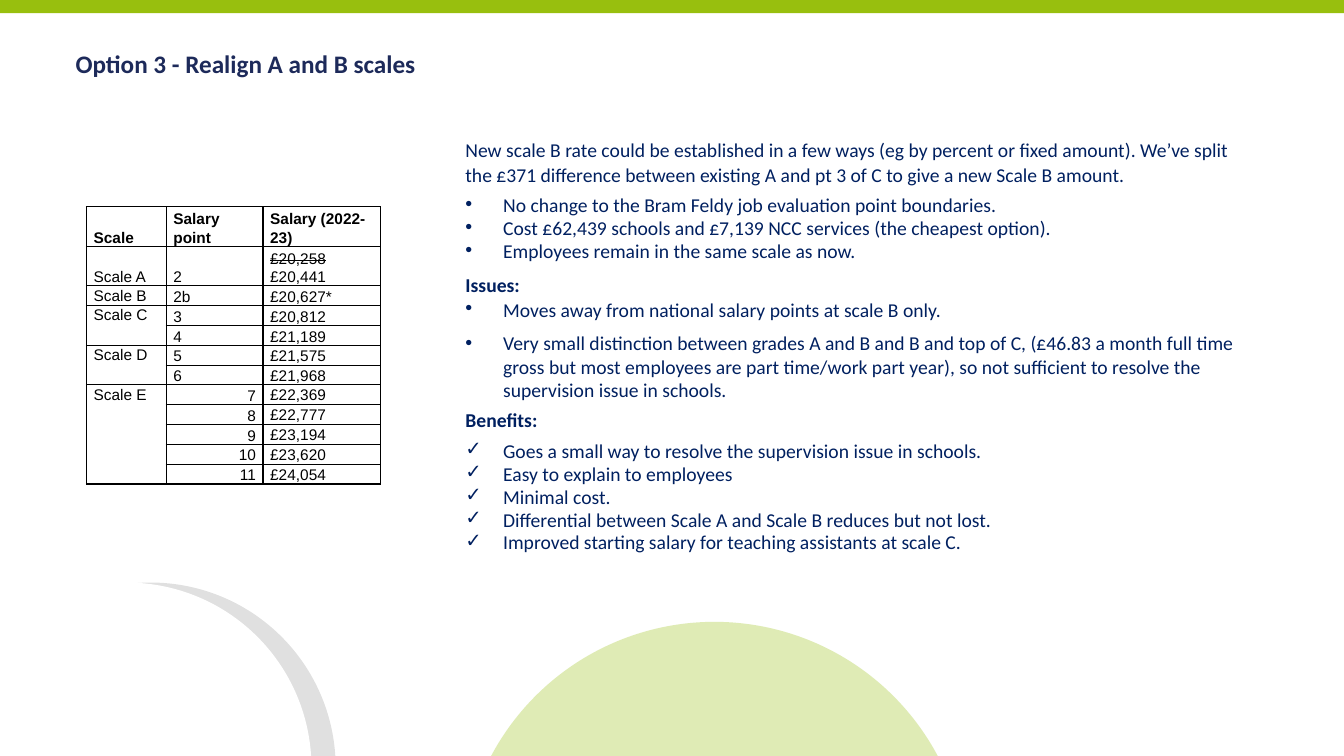
from dataclasses import dataclass

from lxml.etree import SubElement
from pptx import Presentation
from pptx.dml.color import RGBColor
from pptx.enum.shapes import MSO_SHAPE
from pptx.enum.text import MSO_ANCHOR, PP_ALIGN
from pptx.oxml.ns import qn
from pptx.util import Cm, Pt


@dataclass(frozen=True)
class Theme:
    green: str = "97BF0D"
    bar: str = "98BF0E"
    white: str = "FFFFFF"
    black: str = "000000"
    title: str = "1D2A5A"
    navy: str = "002060"
    title_size: int = 18
    body_size: int = 14
    table_size: int = 11
    font: str = "Calibri"
    table_font: str = "Arial"


def set_all(obj, values):
    for name, value in values.items():
        setattr(obj, name, value)


class SlideBuilder:
    def __init__(self, prs, theme):
        self.theme = theme
        self.s = prs.slides.add_slide(prs.slide_layouts[5])

    def run(self, p, text, size, color, font, bold=False, strike=False):
        r = p.add_run()
        r.text = text
        set_all(r.font, {"size": Pt(size), "name": font, "bold": bold})
        r.font.color.rgb = RGBColor.from_string(color)
        if strike:
            r._r.get_or_add_rPr().set("strike", "sngStrike")

    def shape(self, kind, box, color, alpha=None):
        sp = self.s.shapes.add_shape(kind, *map(Cm, box))
        sp.shadow.inherit = False
        sp.fill.solid()
        sp.fill.fore_color.rgb = RGBColor.from_string(color)
        sp.line.fill.background()
        if alpha:
            clr = sp.fill._xPr.find(qn("a:solidFill"))[0]
            SubElement(clr, qn("a:alpha"), val=str(alpha * 1000))

    def title(self, text, box):
        sp = self.s.shapes.title
        set_all(sp, dict(zip(("left", "top", "width", "height"), map(Cm, box))))
        tf = sp.text_frame
        set_all(tf, {"word_wrap": True, "vertical_anchor": MSO_ANCHOR.TOP})
        p = tf.paragraphs[0]
        set_all(p, {"alignment": PP_ALIGN.LEFT, "line_spacing": 1.07, "space_after": Pt(8)})
        t = self.theme
        self.run(p, text, t.title_size, t.title, t.font, bold=True)

    def body(self, paragraphs, box):
        t = self.theme
        tf = self.s.shapes.add_textbox(*map(Cm, box)).text_frame
        tf.word_wrap = True
        for i, (text, bullet, bold, spacing, before, after) in enumerate(paragraphs):
            p = tf.add_paragraph() if i else tf.paragraphs[0]
            set_all(p, {"line_spacing": spacing, "space_before": Pt(before),
                        "space_after": Pt(after)})
            if bullet:
                self.bullet(p, bullet)
            self.run(p, text, t.body_size, t.navy, t.font, bold)

    def bullet(self, p, char):
        pPr = p._p.get_or_add_pPr()
        pPr.set("marL", str(Cm(0.95)))
        pPr.set("indent", str(-Cm(0.95)))
        SubElement(SubElement(pPr, qn("a:buClr")), qn("a:srgbClr"), val=self.theme.navy)
        SubElement(pPr, qn("a:buFont"), typeface="Arial")
        SubElement(pPr, qn("a:buChar"), char=char)

    def borders(self, cell):
        tcPr = cell._tc.get_or_add_tcPr()
        for side in ("lnL", "lnR", "lnT", "lnB"):
            ln = SubElement(tcPr, qn(f"a:{side}"), w=str(Pt(1)))
            fill = SubElement(ln, qn("a:solidFill"))
            SubElement(fill, qn("a:srgbClr"), val=self.theme.black)
        cell.fill.background()

    def table(self, rows, spans, left, top, widths, heights):
        t = self.theme
        tbl = self.s.shapes.add_table(len(rows), len(widths), Cm(left), Cm(top),
                                      Cm(sum(widths)), Cm(sum(heights))).table
        set_all(tbl, {"first_row": False, "horz_banding": False})
        for column, width in zip(tbl.columns, widths):
            column.width = Cm(width)
        for row, height in zip(tbl.rows, heights):
            row.height = Cm(height)
        for i, row in enumerate(rows):
            for j, text in enumerate(row):
                cell = tbl.cell(i, j)
                top_cell = j == 0 and i > 1
                set_all(cell, {"margin_left": Cm(0.18), "margin_right": Cm(0.18),
                               "margin_top": 0, "margin_bottom": 0,
                               "vertical_anchor": MSO_ANCHOR.TOP if top_cell else MSO_ANCHOR.BOTTOM})
                self.borders(cell)
                p = cell.text_frame.paragraphs[0]
                set_all(p, {"line_spacing": 1.07, "space_after": Pt(8)})
                if j == 1 and i >= 7:
                    p.alignment = PP_ALIGN.RIGHT
                if j == 2 and 7 <= i < len(rows) - 1:
                    cell.vertical_anchor = MSO_ANCHOR.MIDDLE
                # A tuple holds the old, struck-out value and the new one
                parts = text if isinstance(text, tuple) else (text,)
                for k, part in enumerate(parts):
                    if part:
                        self.run(p, part, t.table_size, t.black, t.table_font,
                                 bold=i == 0, strike=k < len(parts) - 1)
        for first, last in spans:
            tbl.cell(first, 0).merge(tbl.cell(last, 0))


SALARIES = [
    ("Scale", "Salary point", "Salary (2022-23)"),
    ("Scale A", "2", ("£20,258", " £20,441")),
    ("Scale B", "2b", "£20,627*"),
    ("Scale C", "3", "£20,812"),
    ("", "4", "£21,189"),
    ("Scale D", "5", "£21,575"),
    ("", "6", "£21,968"),
    ("Scale E", "7", "£22,369"),
    ("", "8", "£22,777"),
    ("", "9", "£23,194"),
    ("", "10", "£23,620"),
    ("", "11", "£24,054"),
]


def item(text, char="•", spacing=0.5):
    return text, char, False, spacing, 4, 4


def tick(text):
    return item(text, "✓")


# Text, bullet, bold, line spacing, space before, space after
BODY = [
    ("New scale B rate could be established in a few ways (eg by percent or fixed amount). "
     "We’ve split the £371 difference between existing A and pt 3 of C to give a new "
     "Scale B amount.", None, False, 1.05, 0, 8),
    item("No change to the Bram Feldy job evaluation point boundaries."),
    item("Cost £62,439 schools and £7,139 NCC services (the cheapest option)."),
    item("Employees remain in the same scale as now."),
    ("Issues:", None, True, 1.05, 4, 4),
    item("Moves away from national salary points at scale B only."),
    item("Very small distinction between grades A and B and B and top of C, (£46.83 a month "
         "full time gross but most employees are part time/work part year), so not sufficient "
         "to resolve the supervision issue in schools.", spacing=1.0),
    ("Benefits:", None, True, 1.05, 0, 8),
    tick("Goes a small way to resolve the supervision issue in schools."),
    tick("Easy to explain to employees"),
    tick("Minimal cost."),
    tick("Differential between Scale A and Scale B reduces but not lost."),
    tick("Improved starting salary for teaching assistants at scale C."),
]


def main():
    prs = Presentation()
    set_all(prs, {"slide_width": Cm(33.87), "slide_height": Cm(19.05)})
    theme = Theme()
    slide = SlideBuilder(prs, theme)

    # Background circles and top bar
    slide.shape(MSO_SHAPE.OVAL, (-0.86, 14.68, 9.32, 9.32), theme.black, 12)
    slide.shape(MSO_SHAPE.OVAL, (-1.47, 14.68, 9.32, 9.32), theme.white)
    slide.shape(MSO_SHAPE.OVAL, (11.63, 15.67, 12.75, 12.75), theme.green, 30)
    slide.shape(MSO_SHAPE.RECTANGLE, (0, 0, 33.87, 0.33), theme.bar)

    # Title, arguments and salary table
    slide.title("Option 3 - Realign A and B scales", (1.65, 1.04, 28.65, 1.4))
    slide.body(BODY, (11.48, 3.33, 20.19, 13.97))
    slide.table(SALARIES, [(3, 4), (5, 6), (7, 11)], 2.18, 5.21,
                (2.01, 2.44, 2.97), [0.97] * 2 + [0.48] * 10)
    prs.save("out.pptx")


if __name__ == "__main__":
    main()
